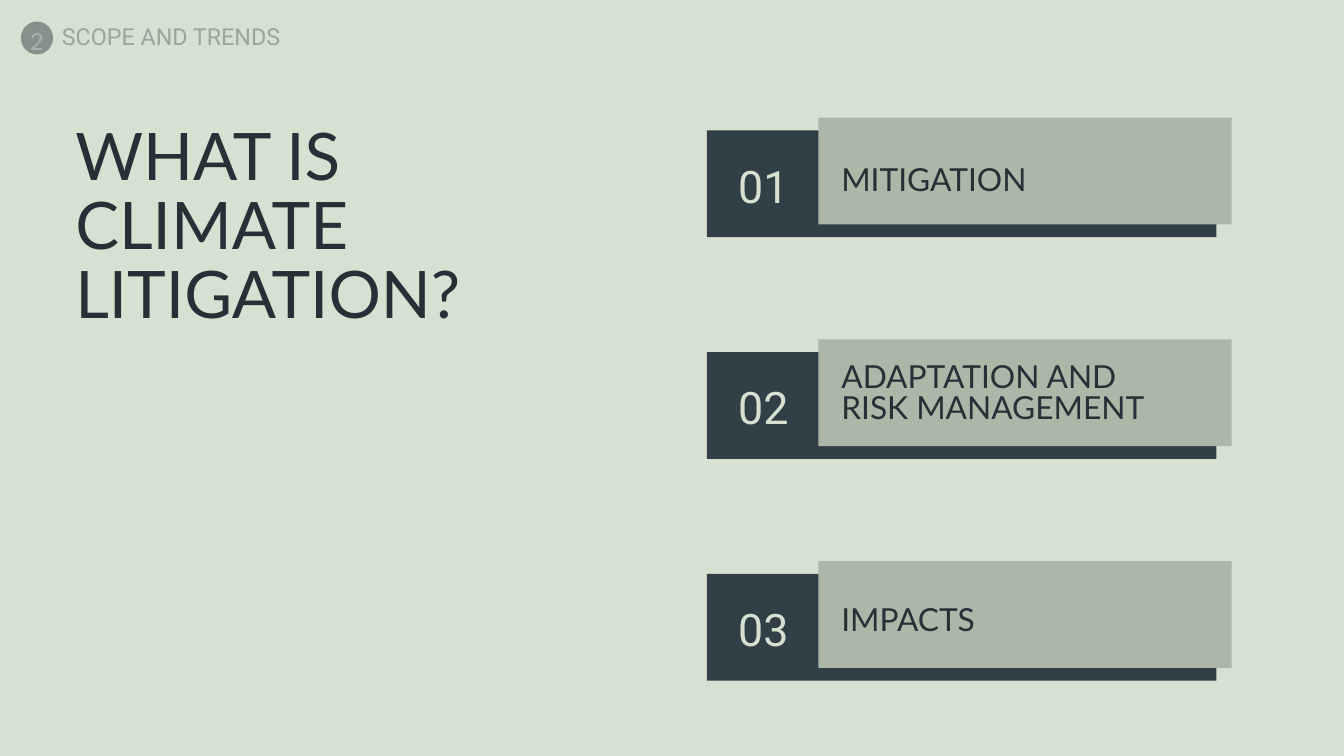
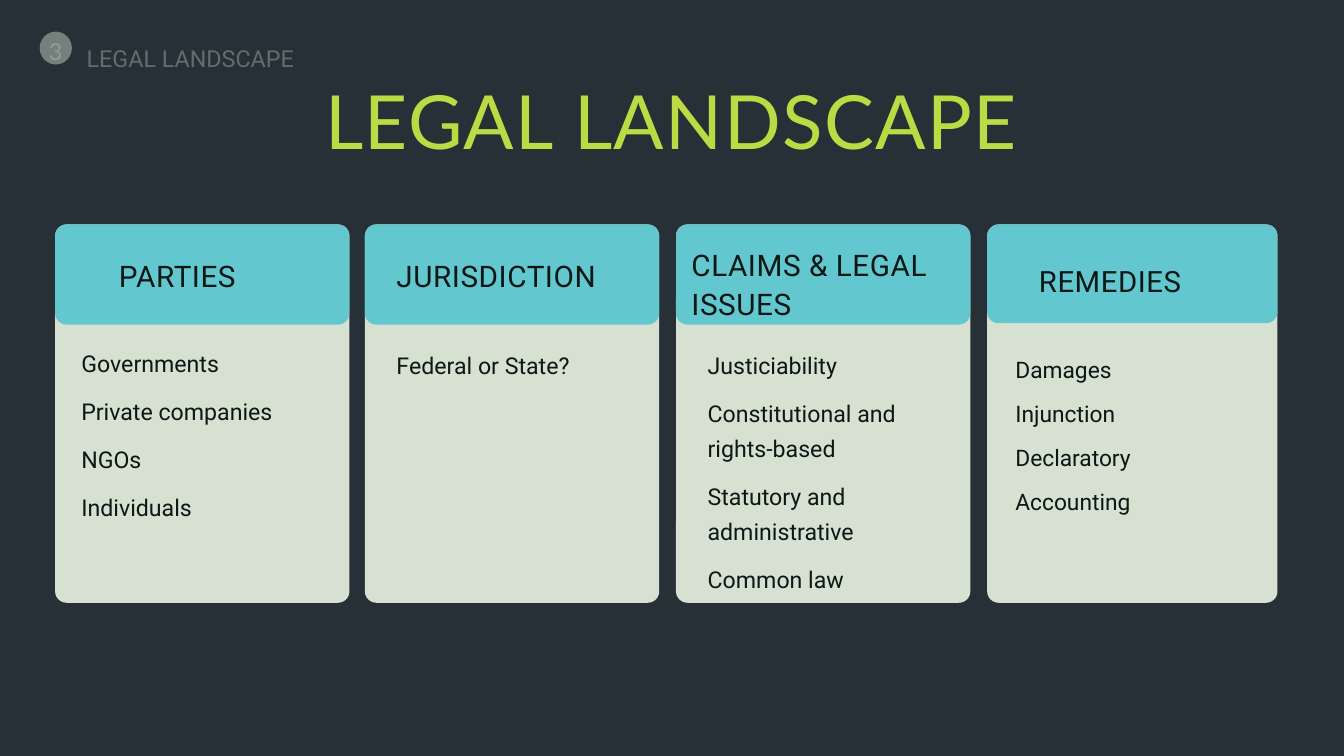
"""Build two slides: the fields of climate litigation and its legal landscape."""
import pptx
import pptx.util
import pptx.dml.color
import pptx.enum.shapes
import pptx.enum.text
import pptx.oxml.ns
from lxml import etree

PX = 9144
COLORS = {
    "sage": "D6E1D1", "ink": "263036", "slate": "313F47", "moss": "ADB7A8",
    "teal": "62C7CE", "lime": "BADB43", "text": "0C1815", "pine": "111F26", "white": "FFFFFF",
}
SHAPE = pptx.enum.shapes.MSO_SHAPE
ALIGN = pptx.enum.text.PP_ALIGN
Pt = pptx.util.Pt
qn = pptx.oxml.ns.qn


def add_block(slide, kind, box, color, radius=0, alpha=100):
    """Add a filled preset shape; radius is in px and alpha in percent."""
    sp = slide.shapes.add_shape(kind, *[v * PX for v in box])
    sp.shadow.inherit = False
    sp.fill.solid()
    sp.fill.fore_color.rgb = pptx.dml.color.RGBColor.from_string(COLORS[color])
    sp.line.fill.background()
    if radius:
        sp.adjustments[0] = radius / min(box[2:])
    if alpha < 100:
        clr = next(sp.element.spPr.iter(qn("a:srgbClr")))
        etree.SubElement(clr, qn("a:alpha"), val=str(alpha * 1000))
    return sp


def write(sp, box, lines, font, size, color, leading,
          align=ALIGN.LEFT, gap=0, spacing=0, alpha=100):
    """Place a text shape and format its paragraphs; gap separates them in points."""
    sp.left, sp.top, sp.width, sp.height = [v * PX for v in box]
    tf = sp.text_frame
    tf.word_wrap = True
    tf.auto_size = pptx.enum.text.MSO_AUTO_SIZE.NONE
    tf.vertical_anchor = pptx.enum.text.MSO_ANCHOR.TOP
    tf.margin_left = tf.margin_top = tf.margin_right = tf.margin_bottom = 0
    tf.text = "\n".join(lines)
    for i, p in enumerate(tf.paragraphs):
        if sp.is_placeholder:
            pPr = p._p.get_or_add_pPr()
            pPr.set("marL", "0")
            pPr.set("indent", "0")
            etree.SubElement(pPr, qn("a:buNone"))
        p.alignment = align
        p.line_spacing = Pt(leading)
        p.space_before = Pt(gap if i else 0)
        p.space_after = Pt(0)
        for r in p.runs:
            r.font.name = font
            r.font.size = Pt(size)
            r.font.bold = False
            r.font.color.rgb = pptx.dml.color.RGBColor.from_string(COLORS[color])
            if spacing:
                r.font._element.set("spc", str(round(spacing * 100)))
            if alpha < 100:
                clr = next(r.font._element.iter(qn("a:srgbClr")))
                etree.SubElement(clr, qn("a:alpha"), val=str(alpha * 1000))


prs = pptx.Presentation()
prs.slide_width = 2000 * PX
prs.slide_height = 1125 * PX

scope = prs.slides.add_slide(prs.slide_layouts.get_by_name("Title Only"))
landscape = prs.slides.add_slide(prs.slide_layouts.get_by_name("Comparison"))
for slide, color in ((scope, "sage"), (landscape, "ink")):
    slide.background.fill.solid()
    slide.background.fill.fore_color.rgb = pptx.dml.color.RGBColor.from_string(COLORS[color])

write(scope.shapes.title, (112, 186, 733, 311), ["WHAT IS CLIMATE LITIGATION?"],
      "Lato", 70.2, "ink", 73.7)

topics = [
    ("MITIGATION", 53, 65, 48.3),
    ("ADAPTATION AND RISK MANAGEMENT", 35, 96, 34),
    ("IMPACTS", 67, 49, 34),
]
for i, (topic, offset, height, leading) in enumerate(topics):
    top = 175 + 330 * i
    add_block(scope, SHAPE.RECTANGLE, (1052, top + 19, 758, 159), "slate")
    add_block(scope, SHAPE.RECTANGLE, (1218, top, 615, 159), "moss")
    write(scope.shapes.add_textbox(0, 0, 0, 0), (1087, top + 46, 98, 90), [f"{i + 1:02}"],
          "Roboto", 48, "sage", 68.2, ALIGN.CENTER)
    write(scope.shapes.add_textbox(0, 0, 0, 0), (1252, top + offset, 497, height), [topic],
          "Lato", 34, "ink", leading)

write(landscape.shapes.title, (229, 111, 1541, 134), ["LEGAL LANDSCAPE"],
      "Lato", 80, "lime", 96, ALIGN.CENTER, spacing=1.6)

cards = [
    (82, 438, 149, "PARTIES", (177, 379, 343, 55), (121, 510, 343, 261),
     ["Governments", "Private companies", "NGOs", "Individuals"]),
    (543, 438, 149, "JURISDICTION", (590, 379, 343, 55), (590, 513, 343, 48),
     ["Federal or State?"]),
    (1006, 438, 149, "CLAIMS & LEGAL ISSUES", (1029, 363, 391, 112), (1053, 513, 343, 363),
     ["Justiciability", "Constitutional and rights-based",
      "Statutory and administrative", "Common law"]),
    (1469, 432, 147, "REMEDIES", (1546, 387, 338, 54), (1511, 519, 338, 243),
     ["Damages", "Injunction", "Declaratory", "Accounting"]),
]
regular = {"head": (31.8, 41.4), "list": (24.8, 37.2), "gap": 14.2}
compact = {"head": (31.4, 40.8), "list": (24.4, 36.7), "gap": 10.5}
bodies = [s for s in landscape.placeholders if s.placeholder_format.idx]
for body, card, style in zip(bodies, cards, [regular] * 3 + [compact]):
    left, width, head_height, heading, head_box, list_box, items = card
    add_block(landscape, SHAPE.ROUNDED_RECTANGLE, (left, 334, width, 563), "sage", 17)
    head = add_block(landscape, SHAPE.ROUNDED_RECTANGLE,
                     (left, 334, width, head_height), "teal", 17)
    head.element.addnext(body.element)
    size, leading = style["head"]
    write(landscape.shapes.add_textbox(0, 0, 0, 0), head_box, [heading],
          "Roboto", size, "text", leading, spacing=0.6)
    size, leading = style["list"]
    write(body, list_box, items, "Roboto", size, "text", leading, gap=style["gap"])

sections = [
    (scope, "2", "SCOPE AND TRENDS", (31, 32), (92, 40, 1408, 37), 25,
     "pine", 30, "ink", "white"),
    (landscape, "3", "LEGAL LANDSCAPE", (59, 47), (129, 38, 1408, 57), 50,
     "sage", 34, "sage", "sage"),
]
for slide, number, name, (x, y), box, leading, color, alpha, badge, digit in sections:
    write(slide.shapes.add_textbox(0, 0, 0, 0), box, [name],
          "Roboto", 25, color, leading, alpha=alpha)
    add_block(slide, SHAPE.OVAL, (x, y, 48, 49), badge, alpha=45)
    write(slide.shapes.add_textbox(0, 0, 0, 0), (x - 6, y - 4, 60, 49), [number],
          "Lato", 25, digit, 39.2, ALIGN.CENTER, alpha=30)

prs.save("out.pptx")
